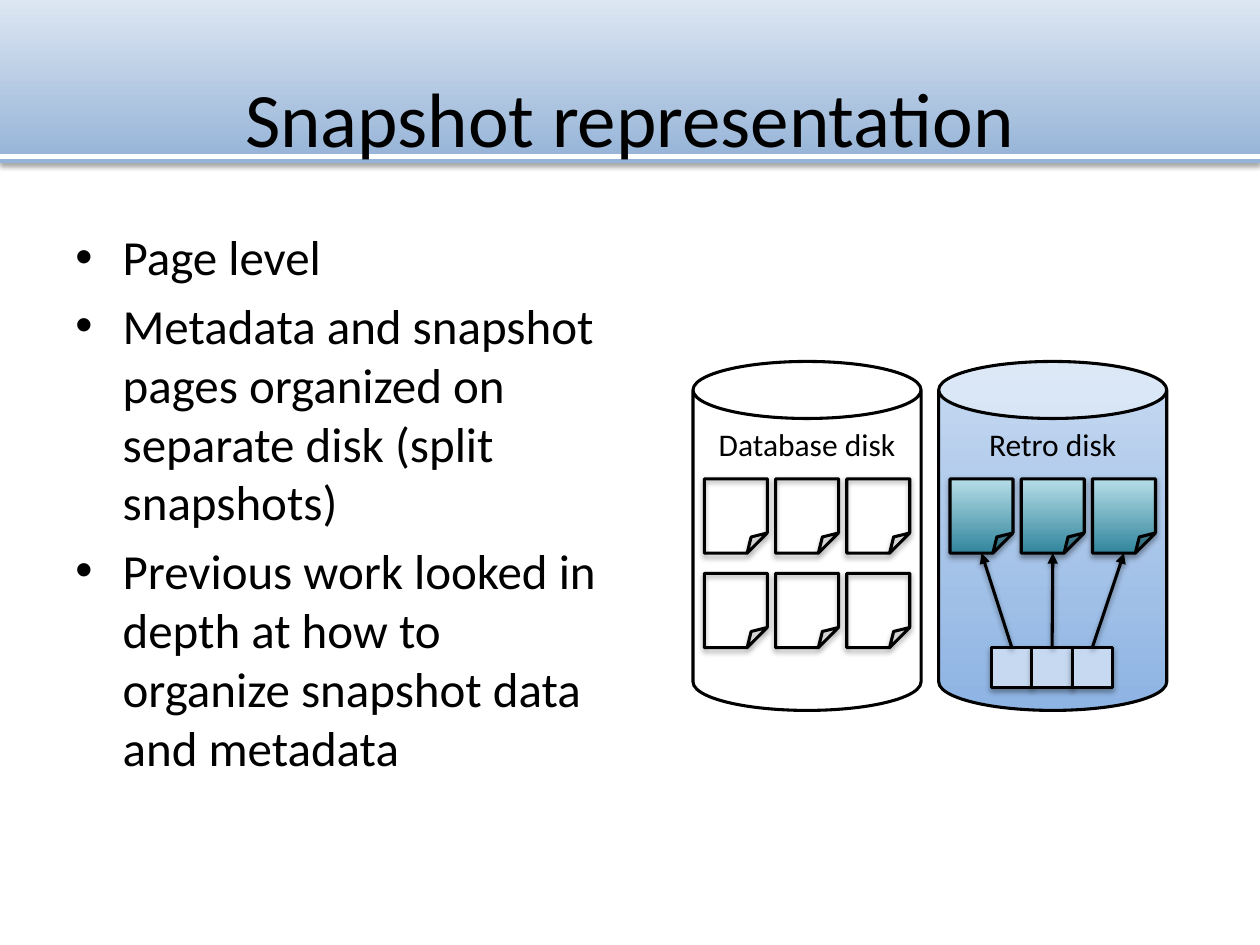
from dataclasses import dataclass
from lxml.etree import SubElement as Sub
from pptx import Presentation
from pptx.dml.color import RGBColor as Rgb
from pptx.enum.shapes import MSO_CONNECTOR as Link, MSO_SHAPE as Kind
from pptx.enum.text import MSO_ANCHOR as Anchor, PP_ALIGN as Align
from pptx.oxml.ns import qn
from pptx.util import Pt

HUES = {
    "black": "000000", "white": "FFFFFF", "cell": "C6D9F1",
    "band": ("95B3D7", "DCE6F2"),
    "retro": ("8EB4E3", "C6D9F1"),
    "page": ("31859C", "B7DEE8"),
}
FONT = "Calibri"
LINE = 1.75
BULLETS = [
    "Page level",
    "Metadata and snapshot pages organized on separate disk (split snapshots)",
    "Previous work looked in depth at how to organize snapshot data and metadata",
]


@dataclass
class Box:
    x: float
    y: float
    w: float
    h: float

    def pts(self) -> tuple:
        return Pt(self.x), Pt(self.y), Pt(self.w), Pt(self.h)


@dataclass
class Disk:
    name: str
    x: float
    fill: str
    page: str
    rows: int


def shade(item, alpha: int = 0, blur: float = 3.1, dist: float = 1.8) -> None:
    """Replace the theme effect with a soft drop shadow, or with none."""
    props = item.element.spPr
    for old in props.findall(qn("a:effectLst")):
        props.remove(old)
    effect = Sub(props, qn("a:effectLst"))
    if alpha:
        drop = Sub(effect, qn("a:outerShdw"), blurRad=str(Pt(blur)),
                   dist=str(Pt(dist)), dir="5400000", rotWithShape="0")
        hue = Sub(drop, qn("a:srgbClr"), val=HUES["black"])
        Sub(hue, qn("a:alpha"), val=str(alpha * 1000))


def paint(fill, key: str) -> None:
    """Fill with one colour, a gradient rising from the first, or nothing."""
    if not key:
        fill.background()
    elif isinstance(HUES[key], tuple):
        fill.gradient()
        fill.gradient_angle = 90
        for stop, hue in zip(fill.gradient_stops, HUES[key]):
            stop.color.rgb = Rgb.from_string(hue)
    else:
        fill.solid()
        fill.fore_color.rgb = Rgb.from_string(HUES[key])


def draw(slide, kind: Kind, box: Box, fill: str, line: bool = True, alpha: int = 35):
    shape = slide.shapes.add_shape(kind, *box.pts())
    paint(shape.fill, fill)
    if line:
        shape.line.width = Pt(LINE)
        paint(shape.line.fill, "black")
    else:
        shape.line.fill.background()
    shade(shape, alpha)
    return shape


def fold(page, ratio: float) -> None:
    """Set the size of the folded corner."""
    guides = page.element.spPr.find(qn("a:prstGeom")).get_or_add_avLst()
    Sub(guides, qn("a:gd"), name="adj", fmla=f"val {round(ratio * 100000)}")


def stroke(slide, ends: tuple, width: float, hue: str):
    line = slide.shapes.add_connector(Link.STRAIGHT, *map(Pt, ends))
    line.line.width = Pt(width)
    paint(line.line.fill, hue)
    shade(line)
    return line


def write(para, text: str, size: float, align: Align) -> None:
    para.text = text
    para.alignment = align
    font = para.font
    font.name, font.size = FONT, Pt(size)
    font.color.rgb = Rgb.from_string(HUES["black"])


def frame(slide, box: Box, anchor: Anchor):
    text = slide.shapes.add_textbox(*box.pts()).text_frame
    text.word_wrap = True
    text.vertical_anchor = anchor
    return text


def list_out(text, items: list[str]) -> None:
    for i, item in enumerate(items):
        para = text.add_paragraph() if i else text.paragraphs[0]
        write(para, item, 28, Align.LEFT)
        para.space_before = Pt(5.6)
        props = para._p.get_or_add_pPr()
        props.set("marL", str(Pt(27)))
        props.set("indent", str(Pt(-27)))
        mark = Sub(props, qn("a:buFont"), typeface="Arial")
        char = Sub(props, qn("a:buChar"), char="•")
        props.find(qn("a:defRPr")).addprevious(mark)
        mark.addnext(char)


def draw_disk(slide, disk: Disk) -> list:
    """Draw a disk with its label and rows of three pages."""
    can = draw(slide, Kind.CAN, Box(disk.x, 206.6, 130.3, 199.4), disk.fill, alpha=0)
    text = can.text_frame
    text.word_wrap = True
    text.vertical_anchor = Anchor.TOP
    write(text.paragraphs[0], disk.name, 18, Align.CENTER)
    pages = []
    for row in range(disk.rows):
        for col in range(3):
            box = Box(disk.x + 6.5 + col * 40.7, 273.6 + row * 54, 36, 42.5)
            page = draw(slide, Kind.FOLDED_CORNER, box, disk.page)
            fold(page, 0.32)
            pages.append(page)
    return pages


def draw_map(slide, pages: list) -> None:
    """Draw the metadata cells, each pointing up at its page."""
    side = 23
    cells = [draw(slide, Kind.RECTANGLE, Box(566.7 + i * side, 370, side, side), "cell")
             for i in range(len(pages))]
    for cell, page in zip(cells, pages):
        arrow = stroke(slide, (0, 0, 0, 0), LINE, "black")
        arrow.begin_connect(cell, 0)
        arrow.end_connect(page, 2)
        Sub(arrow.element.spPr.find(qn("a:ln")), qn("a:tailEnd"), type="triangle")
        shade(arrow, 38, dist=1.6)


def main() -> None:
    deck = Presentation()
    deck.slide_width, deck.slide_height = Pt(720), Pt(540)
    slide = deck.slides.add_slide(deck.slide_layouts[6])

    # Header band and title
    draw(slide, Kind.RECTANGLE, Box(0, 0, 720, 92.9), "band", line=False)
    stroke(slide, (0, 89.3, 720, 89.3), 3, "white")
    title = frame(slide, Box(36, 21.6, 648, 90), Anchor.MIDDLE)
    write(title.paragraphs[0], "Snapshot representation", 44, Align.CENTER)

    # Bullets
    list_out(frame(slide, Box(36, 126, 318.2, 356.4), Anchor.TOP), BULLETS)

    # Disks
    draw_disk(slide, Disk("Database disk", 396, "", "", 2))
    pages = draw_disk(slide, Disk("Retro disk", 536.4, "retro", "page", 1))
    draw_map(slide, pages)

    deck.save("out.pptx")


if __name__ == "__main__":
    main()
